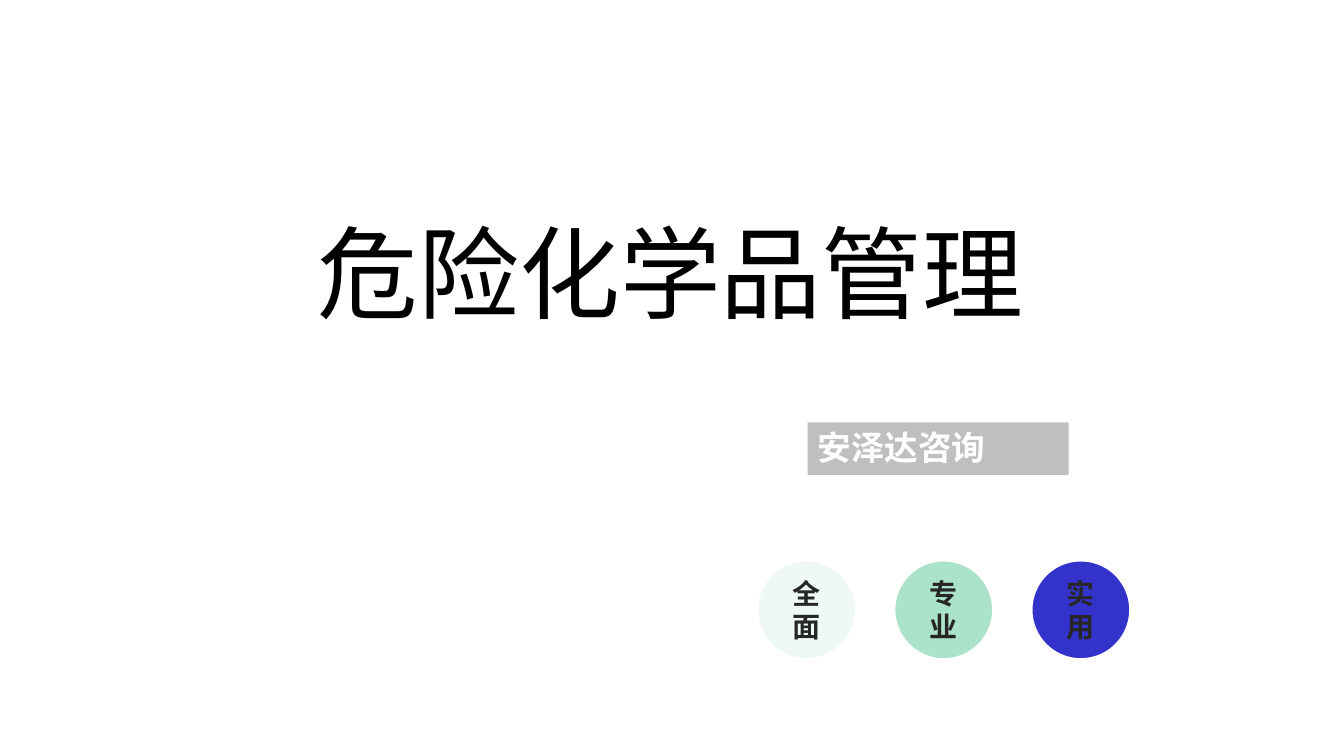
import pptx
import pptx.util
import pptx.dml.color
import pptx.enum.shapes
import pptx.enum.text
import pptx.oxml.ns
from lxml import etree

Inches = pptx.util.Inches
Pt = pptx.util.Pt
Shape = pptx.enum.shapes.MSO_SHAPE
Align = pptx.enum.text.PP_ALIGN
Anchor = pptx.enum.text.MSO_ANCHOR

COLORS = {
    "ink": "000000",
    "dark": "262626",
    "white": "FFFFFF",
    "gray": "BFBFBF",
    "mist": "EEF9F4",
    "mint": "AAE2CA",
    "blue": "3333CC",
}
SANS = "Noto Sans CJK SC"


def tint(name):
    return pptx.dml.color.RGBColor.from_string(COLORS[name])


def place(shape, box):
    shape.left, shape.top, shape.width, shape.height = map(Inches, box)


def write(shape, text, size, color, align, anchor, face, asian, bold):
    """Fill the shape with one paragraph; asian is the font for Chinese text."""
    frame = shape.text_frame
    frame.word_wrap = True
    frame.auto_size = pptx.enum.text.MSO_AUTO_SIZE.NONE
    frame.vertical_anchor = anchor
    para = frame.paragraphs[0]
    para.text = text
    para.alignment = align
    font = para.font
    font.size = Pt(size)
    font.bold = bold
    font.color.rgb = tint(color)
    font.name = face
    qn = pptx.oxml.ns.qn
    props = para._p.pPr.find(qn("a:defRPr"))
    etree.SubElement(props, qn("a:ea")).set("typeface", asian)


def draw(slide, kind, box, fill):
    shape = slide.shapes.add_shape(kind, *map(Inches, box))
    shape.shadow.inherit = False
    shape.fill.solid()
    shape.fill.fore_color.rgb = tint(fill)
    return shape


def title(slide, box):
    face = "Noto Sans CJK JP"
    head = slide.shapes.title
    place(head, box)
    write(head, "危险化学品管理", 72, "ink", Align.CENTER, Anchor.MIDDLE,
          face, face, False)


def banner(slide, box):
    bar = draw(slide, Shape.RECTANGLE, box, "gray")
    bar.line.fill.background()
    write(bar, "安泽达咨询", 24, "white", Align.JUSTIFY, Anchor.TOP,
          SANS, SANS, True)


def badges(slide, box):
    """Spread round badges evenly over the box, each as wide as it is high."""
    left, top, width, size = box
    items = [("全面", "mist"), ("专业", "mint"), ("实用", "blue")]
    step = (width - size) / (len(items) - 1)
    for i, (text, fill) in enumerate(items):
        disc = draw(slide, Shape.OVAL, (left + i * step, top, size, size), fill)
        disc.line.color.rgb = tint("white")
        disc.line.width = Pt(1.5)
        write(disc, text, 20, "dark", Align.CENTER, Anchor.MIDDLE,
              "Times New Roman", SANS, True)


def main():
    deck = pptx.Presentation()
    deck.slide_width = Inches(13.33)
    deck.slide_height = Inches(7.5)
    slide = deck.slides.add_slide(deck.slide_layouts[5])
    title(slide, (1.39, 2.04, 10.52, 1.31))
    banner(slide, (8.01, 4.19, 2.59, 0.52))
    badges(slide, (7.51, 5.56, 3.7, 0.98))
    deck.save("out.pptx")


if __name__ == "__main__":
    main()
